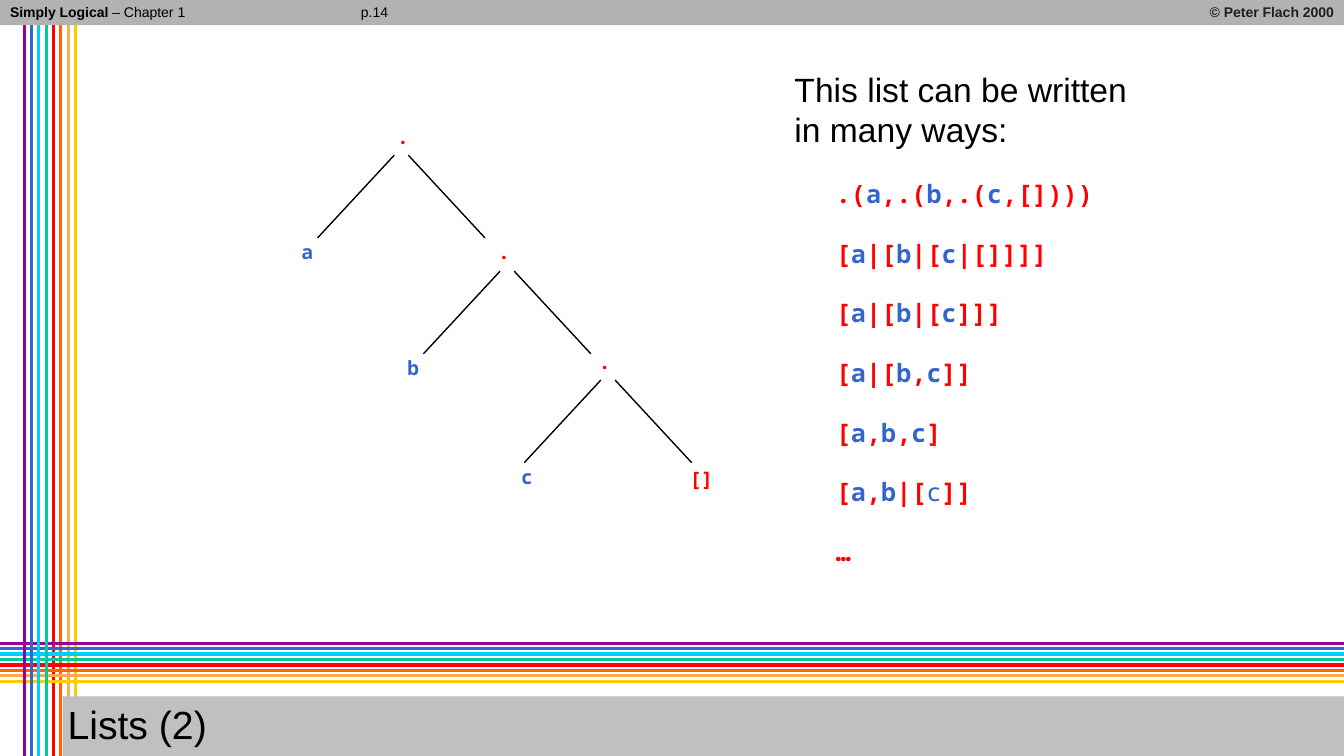
from itertools import groupby

from pptx import Presentation
from pptx.dml.color import RGBColor
from pptx.enum import shapes, text
from pptx.oxml.ns import qn
from pptx.util import Inches, Pt

BLACK = RGBColor(0x00, 0x00, 0x00)
CREDIT = RGBColor(0x20, 0x20, 0x20)
HEADER = RGBColor(0xB2, 0xB2, 0xB2)
FOOTER = RGBColor(0xC0, 0xC0, 0xC0)
RED = RGBColor(0xFF, 0x00, 0x00)
BLUE = RGBColor(0x33, 0x66, 0xCC)
RAINBOW = [RGBColor.from_string(c) for c in (
    "990099", "3366CC", "00CCFF", "00CC99", "FF0000", "FF6600", "FFA953", "FFCC00")]
WIDTH, HEIGHT = 13.33, 7.5

prs = Presentation()
prs.slide_width, prs.slide_height = Inches(WIDTH), Inches(HEIGHT)
s = prs.slides.add_slide(prs.slide_layouts[6])


def add_line(x1, y1, x2, y2, color, weight):
    line = s.shapes.add_connector(
        shapes.MSO_CONNECTOR.STRAIGHT, Inches(x1), Inches(y1), Inches(x2), Inches(y2))
    line.line.color.rgb = color
    line.line.width = Pt(weight)
    line._element.spPr.append(line._element.makeelement(qn("a:effectLst"), {}))


def add_text(x, y, w, h, runs, size, color, font="Arial", wrap=True, fill=None):
    """Add a box with one paragraph; runs are (text, bold) pairs."""
    if fill is None:
        sp = s.shapes.add_textbox(Inches(x), Inches(y), Inches(w), Inches(h))
    else:
        sp = s.shapes.add_shape(
            shapes.MSO_SHAPE.RECTANGLE, Inches(x), Inches(y), Inches(w), Inches(h))
        sp.shadow.inherit = False
        sp.fill.solid()
        sp.fill.fore_color.rgb = fill
        sp.line.fill.background()
    tf = sp.text_frame
    tf.word_wrap = wrap
    tf.margin_left = tf.margin_right = tf.margin_top = tf.margin_bottom = Inches(0.05)
    p = tf.paragraphs[0]
    p.alignment = text.PP_ALIGN.LEFT
    p.line_spacing = 0.9
    p.font.size, p.font.name, p.font.color.rgb = Pt(size), font, color
    for words, bold in runs:
        r = p.add_run()
        r.text, r.font.bold = words, bold
    return tf


# Rainbow stripes: the last four verticals lie under the horizontals, the rest over
stripes = list(enumerate(RAINBOW))
step_x, step_y = (0.75 - 0.24) / 7, (6.76 - 6.38) / 7
for i, color in stripes[4:]:
    add_line(0.24 + i * step_x, 0, 0.24 + i * step_x, HEIGHT, color, 2.25)
for i, color in stripes:
    add_line(WIDTH, 6.38 + i * step_y, 0, 6.38 + i * step_y, color, 2.25)
for i, color in stripes[:4]:
    add_line(0.24 + i * step_x, 0, 0.24 + i * step_x, HEIGHT, color, 2.25)

# Header bar
add_text(0, 0, WIDTH, 0.25, [], 10, BLACK, fill=HEADER)
add_text(0.05, 0, 2.56, 0.27, [("Simply Logical", True), (" – Chapter 1", False)], 10, BLACK)
tf = add_text(9.78, 0, 3.5, 0.27, [("© Peter Flach 2000", True)], 10, CREDIT)
tf.paragraphs[0].alignment = text.PP_ALIGN.RIGHT
add_text(3.53, 0, 0.38, 0.26, [("p.14", False)], 10, BLACK, wrap=False)

# Tree: each fork spreads two branches from its apex
for x, y in [(3.98, 1.54), (5.03, 2.69), (6.03, 3.77)]:
    for side in (1, -1):
        add_line(x + side * 0.07, y, x + side * 0.83, y + 0.82, BLACK, 1)
for label, x, y in [(".", 3.89, 1.22), ("a", 2.94, 2.36), (".", 4.89, 2.36), ("b", 3.99, 3.51),
                    (".", 5.89, 3.45), ("c", 5.12, 4.59), ("[]", 6.79, 4.61)]:
    add_text(x, y, 0.34 if label == "[]" else 0.23, 0.33, [(label, True)], 14,
             BLUE if label.isalpha() else RED, "Noto Sans Mono", wrap=False)

# Title bar
tf = add_text(0.62, 6.91, 12.72, 0.6, [("Lists (2)", False)], 28, BLACK, fill=FOOTER)
tf.vertical_anchor = text.MSO_ANCHOR.MIDDLE

# List notations: letters blue, punctuation red
tf = add_text(7.83, 0.63, 3.42, 5.29,
              [("This list can be written in many ways:", False)], 24, BLACK)
tf.paragraphs[0].line_spacing = 1.0
tf.paragraphs[0].space_before = Pt(28)
for notation, plain in [(".(a,.(b,.(c,[])))", ""), ("[a|[b|[c|[]]]]", ""), ("[a|[b|[c]]]", ""),
                        ("[a|[b,c]]", ""), ("[a,b,c]", ""), ("[a,b|[c]]", "c"), ("…", "")]:
    p = tf.add_paragraph()
    p.level = 1
    p.space_before = Pt(21)
    p.font.size, p.font.name = Pt(18), "Noto Sans Mono"
    pPr = p._p.get_or_add_pPr()
    pPr.set("marL", str(Inches(0.41)))
    pPr.set("indent", "0")
    for is_letter, chars in groupby(notation, str.isalpha):
        r = p.add_run()
        r.text = "".join(chars)
        r.font.bold = r.text != plain
        r.font.color.rgb = BLUE if is_letter else RED

prs.save("out.pptx")
